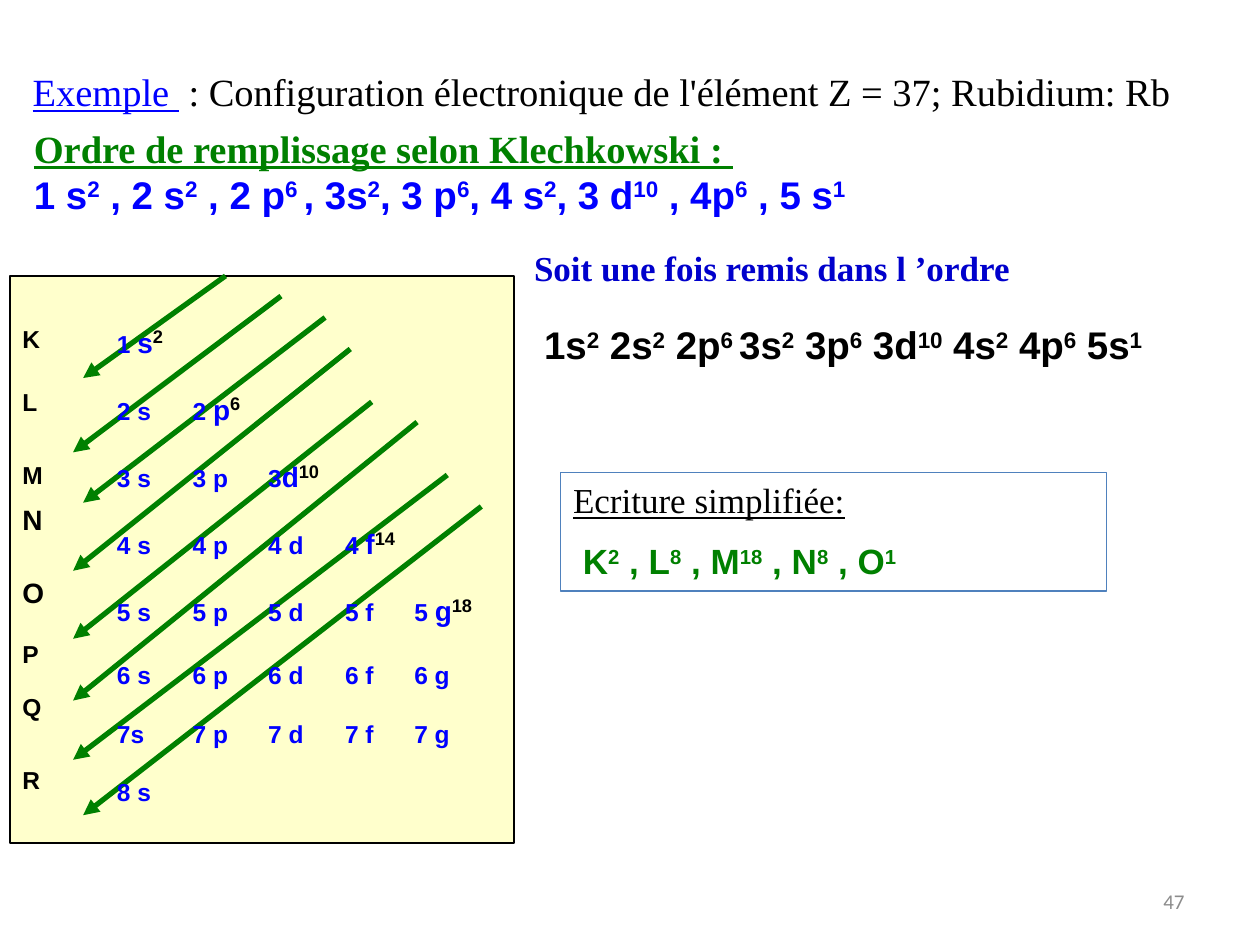
"""Build a slide on the electron configuration of rubidium and the Klechkowski order."""
from lxml import etree
from pptx import Presentation
from pptx.dml.color import RGBColor
from pptx.enum.shapes import MSO_CONNECTOR, MSO_SHAPE
from pptx.enum.text import MSO_ANCHOR, PP_ALIGN
from pptx.oxml.ns import qn
from pptx.util import Inches, Pt

RECTANGLE = MSO_SHAPE.RECTANGLE
STRAIGHT = MSO_CONNECTOR.STRAIGHT
MIDDLE = MSO_ANCHOR.MIDDLE
LEFT, RIGHT = PP_ALIGN.LEFT, PP_ALIGN.RIGHT

BLACK = RGBColor(0x00, 0x00, 0x00)
WHITE = RGBColor(0xFF, 0xFF, 0xFF)
BLUE = RGBColor(0x00, 0x00, 0xFF)
DARK_BLUE = RGBColor(0x00, 0x00, 0xCC)
GREEN = RGBColor(0x00, 0x80, 0x00)
CREAM = RGBColor(0xFF, 0xFF, 0xCC)
FRAME_BLUE = RGBColor(0x4F, 0x81, 0xBD)
GRAY = RGBColor(0x8C, 0x8C, 0x8C)
SANS, SERIF, NUMBER_FONT = "Arial", "Times New Roman", "Calibri"

presentation = Presentation()
presentation.slide_width = Inches(10)
presentation.slide_height = Inches(7.5)
COLUMN = presentation.slide_width / 100
ROW = presentation.slide_height / 75
slide = presentation.slides.add_slide(presentation.slide_layouts[5])


def write(paragraph, text, size=14, color=BLACK, font=SANS, bold=True, underline=False):
    """Append text to a paragraph, raising the parts between carets."""
    for index, part in enumerate(text.split("^")):
        if part:
            run = paragraph.add_run()
            run.text = part
            run.font.size = Pt(size)
            run.font.name = font
            run.font.bold = bold
            run.font.underline = underline
            run.font.color.rgb = color
            if index % 2:
                run.font._element.set("baseline", "30000")


def add_panel(left, top, width, height, fill=None, line=None):
    """Add a wrapping rectangle on the grid and return its text frame."""
    place = [round(left * COLUMN), round(top * ROW), round(width * COLUMN), round(height * ROW)]
    if fill is None:
        panel = slide.shapes.add_textbox(*place)
    else:
        panel = slide.shapes.add_shape(RECTANGLE, *place)
        panel.shadow.inherit = False
        panel.fill.solid()
        panel.fill.fore_color.rgb = fill
        if line is None:
            panel.line.fill.background()
        else:
            panel.line.color.rgb = line
            panel.line.width = Pt(0.75)
    panel.text_frame.word_wrap = True
    panel.text_frame.paragraphs[0].alignment = LEFT
    return panel.text_frame


title = slide.shapes.title
title.left, title.top = round(1.6 * COLUMN), round(4.9 * ROW)
title.width, title.height = round(93.8 * COLUMN), round(4.7 * ROW)
title.text_frame.vertical_anchor = MIDDLE
heading = title.text_frame.paragraphs[0]
heading.alignment = LEFT
write(heading, "Exemple ", 22, BLUE, SERIF, bold=False, underline=True)
write(heading, " : Configuration électronique de l'élément Z = 37; Rubidium: Rb",
      22, font=SERIF, bold=False)

ordered = add_panel(42.2, 25, 56.2, 4.7, WHITE).paragraphs[0]
write(ordered, "1s^2^ 2s^2^ 2p^6 ^3s^2^ 3p^6^ 3d^10^ 4s^2^ 4p^6^ 5s^1^", 22)

add_panel(0.8, 21.9, 40, 45, CREAM, BLACK)

diagonals = [
    (17.9, 21.9, 6.6, 30), (22.3, 23.5, 5.8, 35.9), (25.8, 25.2, 6.6, 39.9),
    (27.8, 27.7, 5.8, 45.3), (29.5, 31.9, 5.8, 50.7), (33.1, 33.5, 5.8, 55.6),
    (35.5, 37.7, 5.8, 60.3), (38.2, 40.2, 6.6, 64.7),
]
for start_x, start_y, end_x, end_y in diagonals:
    diagonal = slide.shapes.add_connector(
        STRAIGHT, round(start_x * COLUMN), round(start_y * ROW),
        round(end_x * COLUMN), round(end_y * ROW))
    diagonal.line.color.rgb = GREEN
    diagonal.line.width = Pt(3)
    etree.SubElement(diagonal.line._get_or_add_ln(), qn("a:tailEnd"), type="triangle")
    etree.SubElement(diagonal._element.spPr, qn("a:effectLst"))

subshells = [
    ("1 ", "s", "2", 38.4),
    ("2 s\t2 ", "p", "6", 38.4),
    ("3 s\t3 p\t3", "d", "10", 38.4),
    ("4 s\t4 p\t4 d\t4 ", "f", "14", 38.4),
    ("5 s\t5 p\t5 d\t5 f\t5 ", "g", "18", 38.4),
    ("6 s\t6 p\t6 d\t6 f\t6 g", "", "", 34.8),
    ("7s\t7 p\t7 d\t7 f\t7 g", "", "", 33.6),
    ("8 s", "", "", 33.6),
]
grid = add_panel(8.3, 22.7, 32.2, 43.7)
for index, (filled, last, capacity, pitch) in enumerate(subshells):
    shell_row = grid.add_paragraph() if index else grid.paragraphs[0]
    shell_row.line_spacing = Pt(pitch)
    tab_list = etree.SubElement(shell_row._p.get_or_add_pPr(), qn("a:tabLst"))
    for stop in (6, 12, 18.1, 23.6):
        etree.SubElement(tab_list, qn("a:tab"), pos=str(round(stop * COLUMN)), algn="l")
    write(shell_row, filled, color=BLUE)
    write(shell_row, last, 16, BLUE)
    write(shell_row, f"^{capacity}^", 18)

shell_labels = [
    ("K", 25.2, 14), ("L", 30.2, 14), ("M", 36, 14), ("N", 39.4, 16),
    ("O", 45.2, 16), ("P", 50.2, 14), ("Q", 54.4, 14), ("R", 60.2, 14),
]
for shell, top, size in shell_labels:
    write(add_panel(0.8, top, 5, 3.6).paragraphs[0], shell, size)

filling = add_panel(1.7, 9.4, 97.5, 8.4)
write(filling.paragraphs[0], "Ordre de remplissage selon Klechkowski : ",
      22, GREEN, SERIF, underline=True)
write(filling.add_paragraph(),
      "1 s^2^ , 2 s^2^ , 2 p^6 ^, 3s^2^, 3 p^6^, 4 s^2^, 3 d^10^ , 4p^6^ , 5 s^1^", 22, BLUE)

simplified = add_panel(44.5, 37.5, 43.3, 9.4, WHITE, FRAME_BLUE)
simplified.vertical_anchor = MSO_ANCHOR.TOP
write(simplified.paragraphs[0], "Ecriture simplifiée:", 20, font=SERIF, bold=False, underline=True)
shell_totals = simplified.add_paragraph()
shell_totals.alignment = LEFT
shell_totals.space_before = Pt(11)
write(shell_totals, " ", 20, bold=False)
write(shell_totals, "K^2^ , L^8^ , M^18^ , N^8^ , O^1^", 20, GREEN)

write(add_panel(41.4, 19.1, 58, 4.4).paragraphs[0],
      "Soit une fois remis dans l ’ordre", 20, DARK_BLUE, SERIF)

page = add_panel(71.7, 69.5, 23.3, 4)
page.vertical_anchor = MIDDLE
page.paragraphs[0].alignment = RIGHT
write(page.paragraphs[0], "47", 12, GRAY, NUMBER_FONT, bold=False)

presentation.save("out.pptx")
